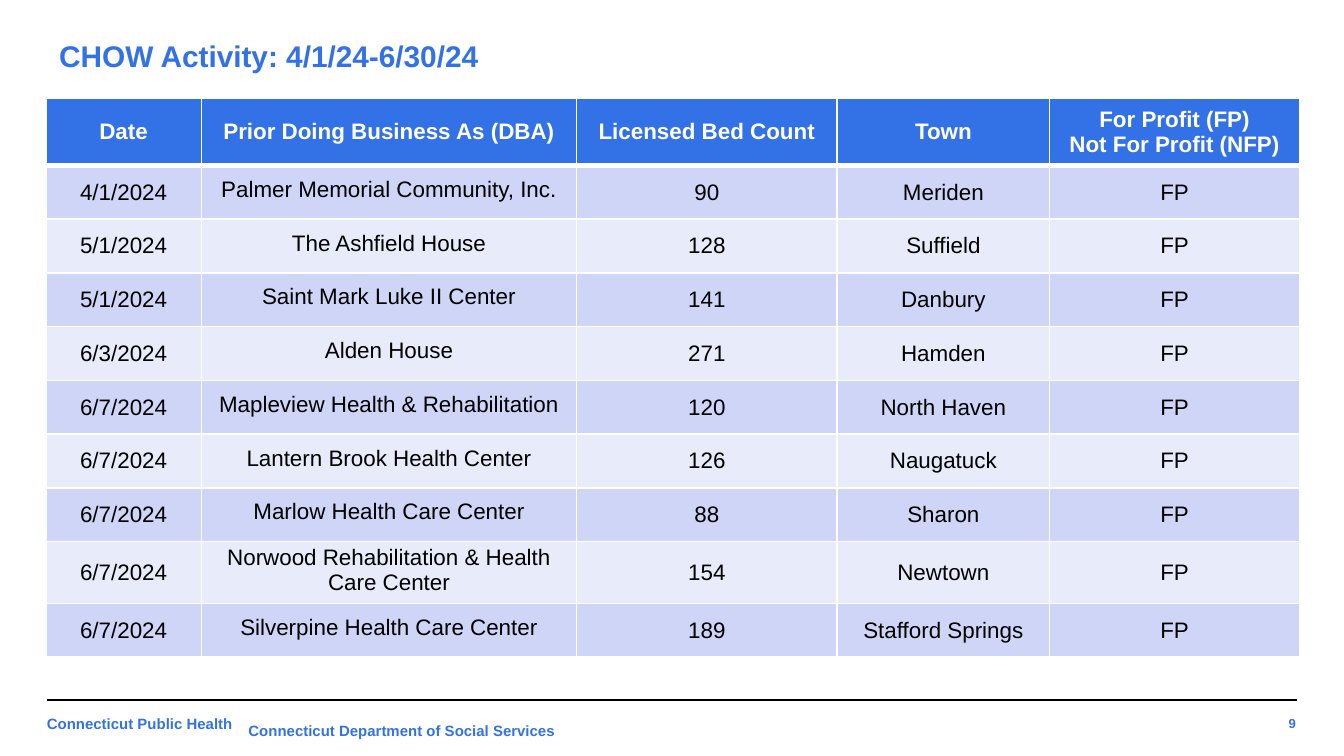
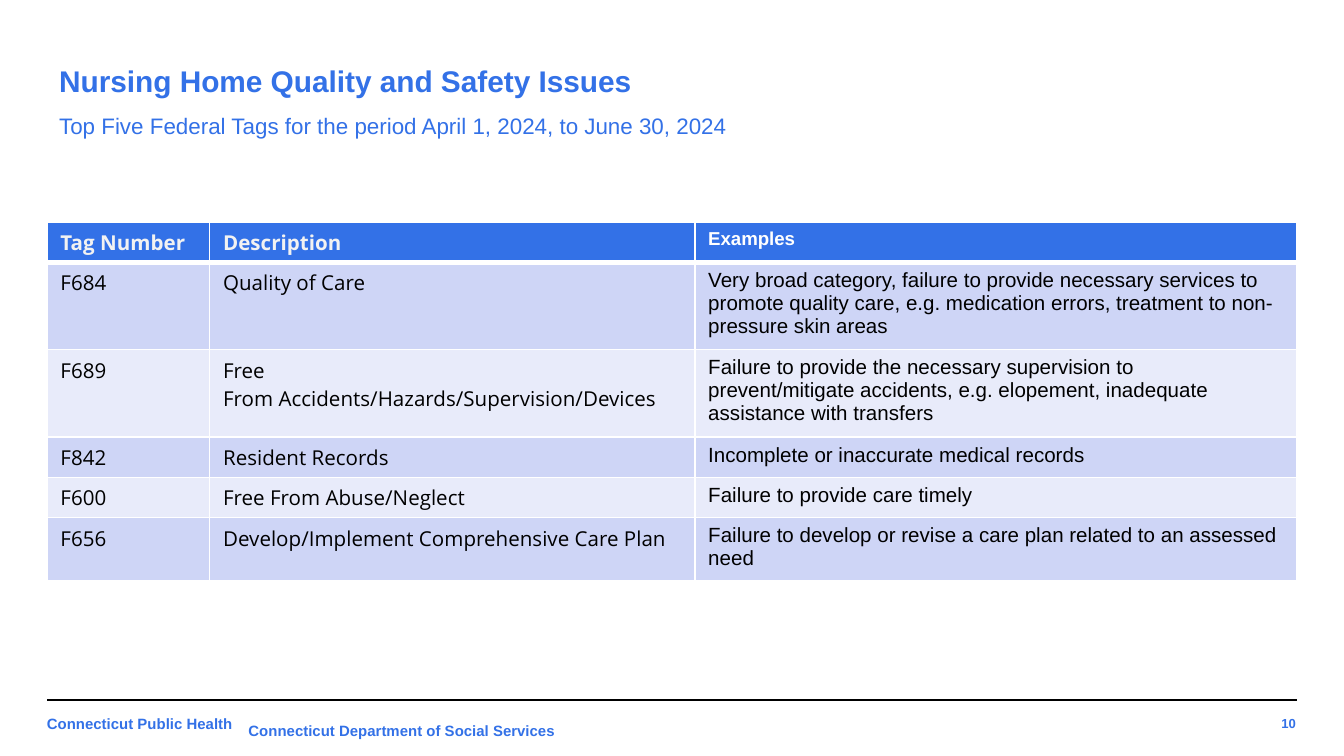
from lxml import etree
from pptx import Presentation
from pptx.dml.color import RGBColor
from pptx.enum.shapes import MSO_CONNECTOR
from pptx.enum.text import MSO_ANCHOR, MSO_AUTO_SIZE, PP_ALIGN
from pptx.oxml.ns import qn
from pptx.util import Inches, Pt

LEFT, CENTER, RIGHT = PP_ALIGN.LEFT, PP_ALIGN.CENTER, PP_ALIGN.RIGHT
TOP, MIDDLE = MSO_ANCHOR.TOP, MSO_ANCHOR.MIDDLE
STRAIGHT = MSO_CONNECTOR.STRAIGHT
NO_AUTOFIT = MSO_AUTO_SIZE.NONE
TITLE_ONLY = 5
HARD_SPACE = chr(160)

BLUE = RGBColor(0x33, 0x71, 0xE7)
BAND_DARK = RGBColor(0xCE, 0xD5, 0xF6)
BAND_LIGHT = RGBColor(0xE8, 0xEB, 0xFA)
BLACK = RGBColor(0, 0, 0)
WHITE = RGBColor(0xFF, 0xFF, 0xFF)
PALE_GREY = RGBColor(0xF2, 0xF2, 0xF2)
SANS, OPEN_SANS = "Arial", "Open Sans"

CHOW_HEADER = ("Date", "Prior Doing Business As (DBA)", "Licensed Bed Count",
               "Town", "For Profit (FP)\nNot For Profit (NFP)")
CHOW_SALES = [
    ("4/1/2024", "Palmer Memorial Community, Inc.", "90", "Meriden"),
    ("5/1/2024", "The Ashfield House", "128", "Suffield"),
    ("5/1/2024", "Saint Mark Luke II Center", "141", "Danbury"),
    ("6/3/2024", "Alden House", "271", "Hamden"),
    ("6/7/2024", "Mapleview Health & Rehabilitation", "120", "North Haven"),
    ("6/7/2024", "Lantern Brook Health Center", "126", "Naugatuck"),
    ("6/7/2024", "Marlow Health Care Center", "88", "Sharon"),
    ("6/7/2024", "Norwood Rehabilitation & Health Care Center", "154", "Newtown"),
    ("6/7/2024", "Silverpine Health Care Center", "189", "Stafford Springs"),
]
TAG_ROWS = [
    ("Tag Number", "Description", "Examples"),
    ("F684", "Quality of Care",
     "Very broad category, failure to provide necessary services to promote "
     "quality care, e.g. medication errors, treatment to non-pressure skin areas"),
    ("F689", f"Free From{HARD_SPACE}Accidents/Hazards/Supervision/Devices",
     "Failure to provide the necessary supervision to prevent/mitigate accidents, "
     "e.g. elopement, inadequate assistance with transfers"),
    ("F842", "Resident Records", "Incomplete or inaccurate medical records"),
    ("F600", "Free From Abuse/Neglect", "Failure to provide care timely"),
    ("F656", "Develop/Implement Comprehensive Care Plan",
     "Failure to develop or revise a care plan related to an assessed need"),
]


def style_text(frame, size, color, bold=False, font=SANS, align=LEFT):
    """Format every run and paragraph of a text frame."""
    for paragraph in frame.paragraphs:
        paragraph.alignment = align
        for span in paragraph.runs:
            span.font.name = font
            span.font.size = Pt(size)
            span.font.bold = bold
            span.font.color.rgb = color


def set_margins(frame, side, end):
    """Set the side margins and the top and bottom margins of a text frame."""
    frame.margin_left = frame.margin_right = Inches(side)
    frame.margin_top = frame.margin_bottom = Inches(end)


def add_label(page, text, place, size, align=LEFT, anchor=TOP, end=0.1, wrap=True):
    """Add a bold blue footer label."""
    box = page.shapes.add_textbox(*map(Inches, place))
    frame = box.text_frame
    frame.word_wrap = wrap
    frame.vertical_anchor = anchor
    set_margins(frame, 0.1, end)
    frame.text = text
    style_text(frame, size, BLUE, True, align=align)


def add_footer(page, number):
    """Add the footer rule, both agency names and the page number."""
    rule = page.shapes.add_connector(STRAIGHT, Inches(9.65), Inches(5.21),
                                     Inches(0.35), Inches(5.21))
    rule.line.color.rgb = BLACK
    rule.line.width = Pt(0.75)
    etree.SubElement(rule._element.spPr, qn("a:effectLst"))
    add_label(page, str(number), (9.14, 5.26, 0.6, 0.25), 7, RIGHT, MIDDLE)
    add_label(page, "Connecticut Public Health", (0.25, 5.25, 3.28, 0.34), 8)
    add_label(page, "Connecticut Department of Social Services",
              (1.75, 5.32, 2.51, 0.24), 8, end=0.05, wrap=False)


def add_page(deck, title, title_height, number):
    """Add a page with its title and footer."""
    page = deck.slides.add_slide(deck.slide_layouts[TITLE_ONLY])
    heading = page.shapes.title
    heading.left, heading.top = Inches(0.34), Inches(0.25)
    heading.width, heading.height = Inches(9.32), Inches(title_height)
    frame = heading.text_frame
    frame.auto_size = NO_AUTOFIT
    frame.vertical_anchor = MIDDLE
    set_margins(frame, 0.1, 0.1)
    frame.text = title
    style_text(frame, 16, BLUE, True)
    add_footer(page, number)
    return page


def set_border(cell, side, width):
    """Draw one white cell border."""
    line = etree.SubElement(cell._tc.get_or_add_tcPr(), qn(f"a:ln{side}"),
                            w=str(Pt(width)))
    fill = etree.SubElement(line, qn("a:solidFill"))
    etree.SubElement(fill, qn("a:srgbClr"), val=str(WHITE))


def add_banded_table(page, place, widths, row_height, rows):
    """Add a table with a blue header, banded rows and white borders."""
    holder = page.shapes.add_table(len(rows), len(widths), *map(Inches, place))
    table = holder.table
    for column, width in zip(table.columns, widths):
        column.width = Inches(width)
    for index, (row, texts) in enumerate(zip(table.rows, rows)):
        row.height = Inches(row_height)
        band = BAND_DARK if index % 2 else BAND_LIGHT
        for cell, text in zip(row.cells, texts):
            for side in "LRTB":
                thick = (index, side) in ((0, "B"), (1, "T"))
                set_border(cell, side, 3 if thick else 1)
            cell.fill.solid()
            cell.fill.fore_color.rgb = band if index else BLUE
            cell.text_frame.text = text
    return table


def add_chow_page(deck):
    """Build the page on changes of ownership."""
    page = add_page(deck, "CHOW Activity: 4/1/24-6/30/24", 0.33, 9)
    rows = [CHOW_HEADER] + [sale + ("FP",) for sale in CHOW_SALES]
    table = add_banded_table(page, (0.34, 0.73, 9.32, 4.16),
                             (1.16, 2.79, 1.94, 1.58, 1.86), 0.4, rows)
    for index, row in enumerate(table.rows):
        for cell in row.cells:
            cell.vertical_anchor = MIDDLE
            style_text(cell.text_frame, 12, BLACK if index else WHITE,
                       not index, align=CENTER)
        if index:
            name = row.cells[1]
            name.margin_left = name.margin_right = name.margin_top = Inches(0.01)
            name.margin_bottom = Inches(0.05)


def add_tags_page(deck):
    """Build the page on the most frequent federal tags."""
    title = ("Nursing Home Quality and Safety Issues\v"
             "Top Five Federal Tags for the period April 1, 2024, to June 30, 2024")
    page = add_page(deck, title, 0.87, 10)
    paragraph = page.shapes.title.text_frame.paragraphs[0]
    paragraph.line_spacing = 1.5
    paragraph.space_after = Pt(6)
    subtitle = paragraph.runs[1].font
    subtitle.size, subtitle.bold = Pt(12), False
    table = add_banded_table(page, (0.35, 1.65, 9.3, 2.67),
                             (1.21, 3.61, 4.48), 0.3, TAG_ROWS)
    for index, row in enumerate(table.rows):
        *tag_cells, example = row.cells
        for cell in tag_cells:
            style_text(cell.text_frame, 11, BLACK if index else PALE_GREY,
                       not index, OPEN_SANS)
        style_text(example.text_frame, 11 if index else 10,
                   BLACK if index else WHITE, not index)


def main():
    """Build and save the deck."""
    deck = Presentation()
    deck.slide_width = Inches(10)
    deck.slide_height = Inches(10 * 9 / 16)
    add_chow_page(deck)
    add_tags_page(deck)
    deck.save("out.pptx")


if __name__ == "__main__":
    main()
